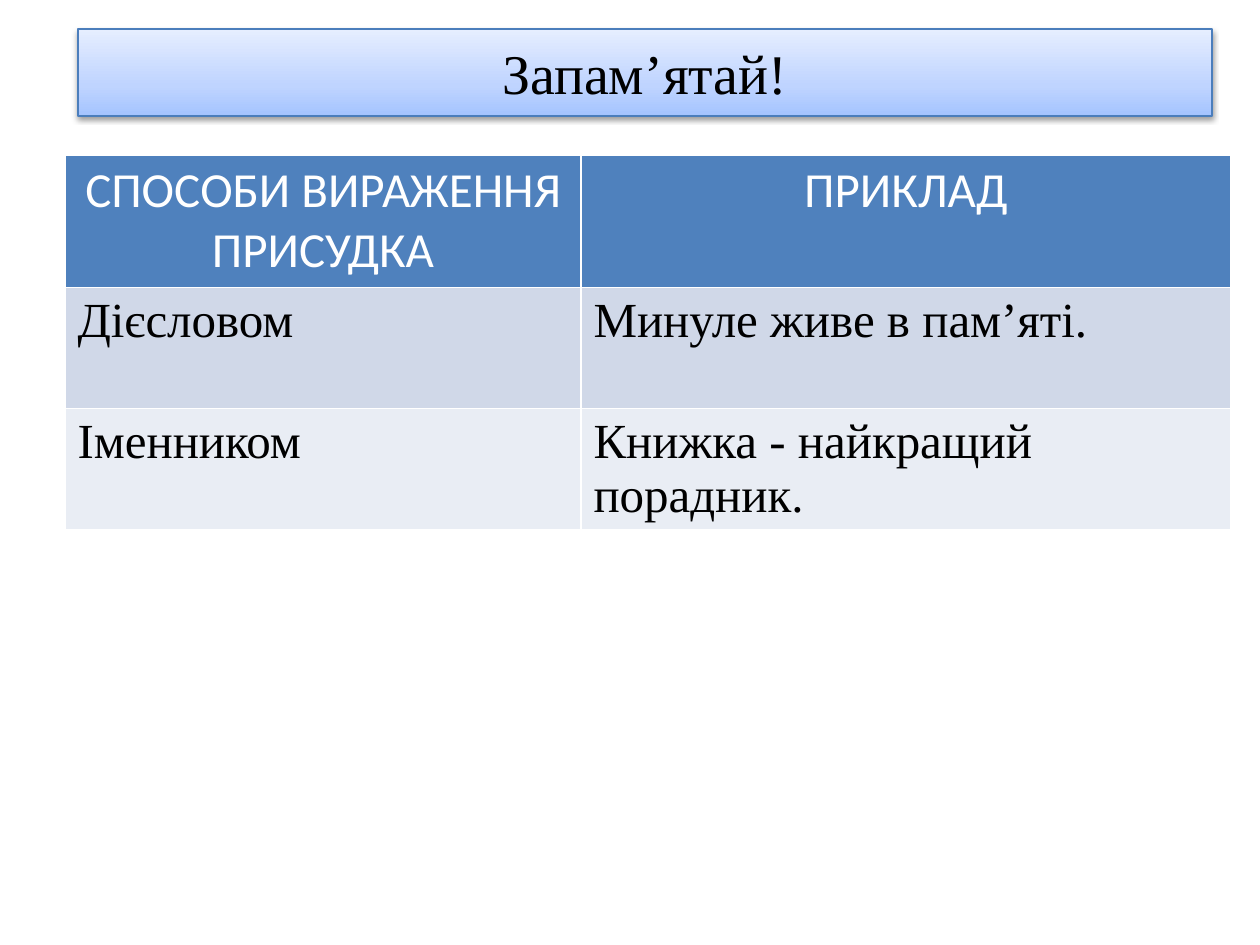
from pptx import Presentation
from pptx import util as u
from pptx.dml.color import RGBColor
from pptx.enum import shapes, text
from pptx.oxml import parse_xml
from pptx.oxml.ns import nsdecls

# Content
TITLE = "Запам’ятай!"
ROWS = [
    ("СПОСОБИ ВИРАЖЕННЯ ПРИСУДКА", "ПРИКЛАД"),
    ("Дієсловом", "Минуле живе в пам’яті."),
    ("Іменником", "Книжка - найкращий порадник."),
]

# Layout in px, 126 to the inch
PX = u.Inches(1) // 126
PAGE = (1260, 945)
TITLE_BOX = (78, 29, 1134, 87)
TABLE_AT = (65, 155)
COLUMN_WIDTHS = (516, 650)
ROW_HEIGHTS = (132, 121, 121)

CENTER, LEFT = text.PP_ALIGN.CENTER, text.PP_ALIGN.LEFT
THEME = {
    "title": {"name": "Times New Roman", "size": u.Pt(32), "color": "000000"},
    "head": {"name": "Calibri", "size": u.Pt(28), "color": "FFFFFF"},
    "body": {"name": "Times New Roman", "size": u.Pt(28), "color": "000000"},
    "row_fills": ("4F81BD", "D0D8E8", "E9EDF4"),
    "gradient": ((0, "A4C4FF"), (35, "BFD4FF"), (100, "E6EEFF")),
    "outline": "4B7EBC",
    "border": "FFFFFF",
}


def px(*lengths):
    return [length * PX for length in lengths]


def write(frame, words, style, align):
    para = frame.paragraphs[0]
    para.alignment = align
    span = para.add_run()
    span.text = words
    for key, value in THEME[style].items():
        if key == "color":
            span.font.color.rgb = RGBColor.from_string(value)
        else:
            setattr(span.font, key, value)


def add_title(page):
    box = page.shapes.add_shape(shapes.MSO_SHAPE.RECTANGLE, *px(*TITLE_BOX))
    box.line.color.rgb = RGBColor.from_string(THEME["outline"])
    box.line.width = u.Pt(0.75)

    # Three-stop gradient, running upwards
    box.fill.gradient()
    box.fill.gradient_angle = 90
    stops = box.element.spPr.find(".//{*}gsLst")
    for stop in list(stops):
        stops.remove(stop)
    for place, color in THEME["gradient"]:
        stops.append(parse_xml(
            f'<a:gs {nsdecls("a")} pos="{place * 1000}"><a:srgbClr val="{color}"/></a:gs>'))

    # Soft shadow below
    box.shadow.inherit = False
    box.element.spPr.find("{*}effectLst").append(parse_xml(
        f'<a:outerShdw {nsdecls("a")} blurRad="40000" dist="20000" dir="5400000" '
        'rotWithShape="0"><a:srgbClr val="000000"><a:alpha val="38000"/></a:srgbClr>'
        '</a:outerShdw>'))

    box.text_frame.word_wrap = True
    box.text_frame.vertical_anchor = text.MSO_ANCHOR.MIDDLE
    write(box.text_frame, TITLE, "title", CENTER)


def add_borders(cell):
    properties = cell._tc.get_or_add_tcPr()
    for index, side in enumerate("LRTB"):
        properties.insert(index, parse_xml(
            f'<a:ln{side} {nsdecls("a")} w="{u.Pt(1)}"><a:solidFill>'
            f'<a:srgbClr val="{THEME["border"]}"/></a:solidFill></a:ln{side}>'))


def add_table(page):
    size = sum(COLUMN_WIDTHS), sum(ROW_HEIGHTS)
    table = page.shapes.add_table(
        len(ROWS), len(COLUMN_WIDTHS), *px(*TABLE_AT, *size)).table
    table.first_row = table.horz_banding = False
    for column, width in zip(table.columns, px(*COLUMN_WIDTHS)):
        column.width = width
    for row, height in zip(table.rows, px(*ROW_HEIGHTS)):
        row.height = height

    for r, (words, fill) in enumerate(zip(ROWS, THEME["row_fills"])):
        style, align = ("body", LEFT) if r else ("head", CENTER)
        for c, entry in enumerate(words):
            cell = table.cell(r, c)
            cell.fill.solid()
            cell.fill.fore_color.rgb = RGBColor.from_string(fill)
            add_borders(cell)
            write(cell.text_frame, entry, style, align)


def main():
    deck = Presentation()
    deck.slide_width, deck.slide_height = px(*PAGE)
    page = deck.slides.add_slide(deck.slide_layouts[6])
    add_title(page)
    add_table(page)
    deck.save("out.pptx")


if __name__ == "__main__":
    main()
